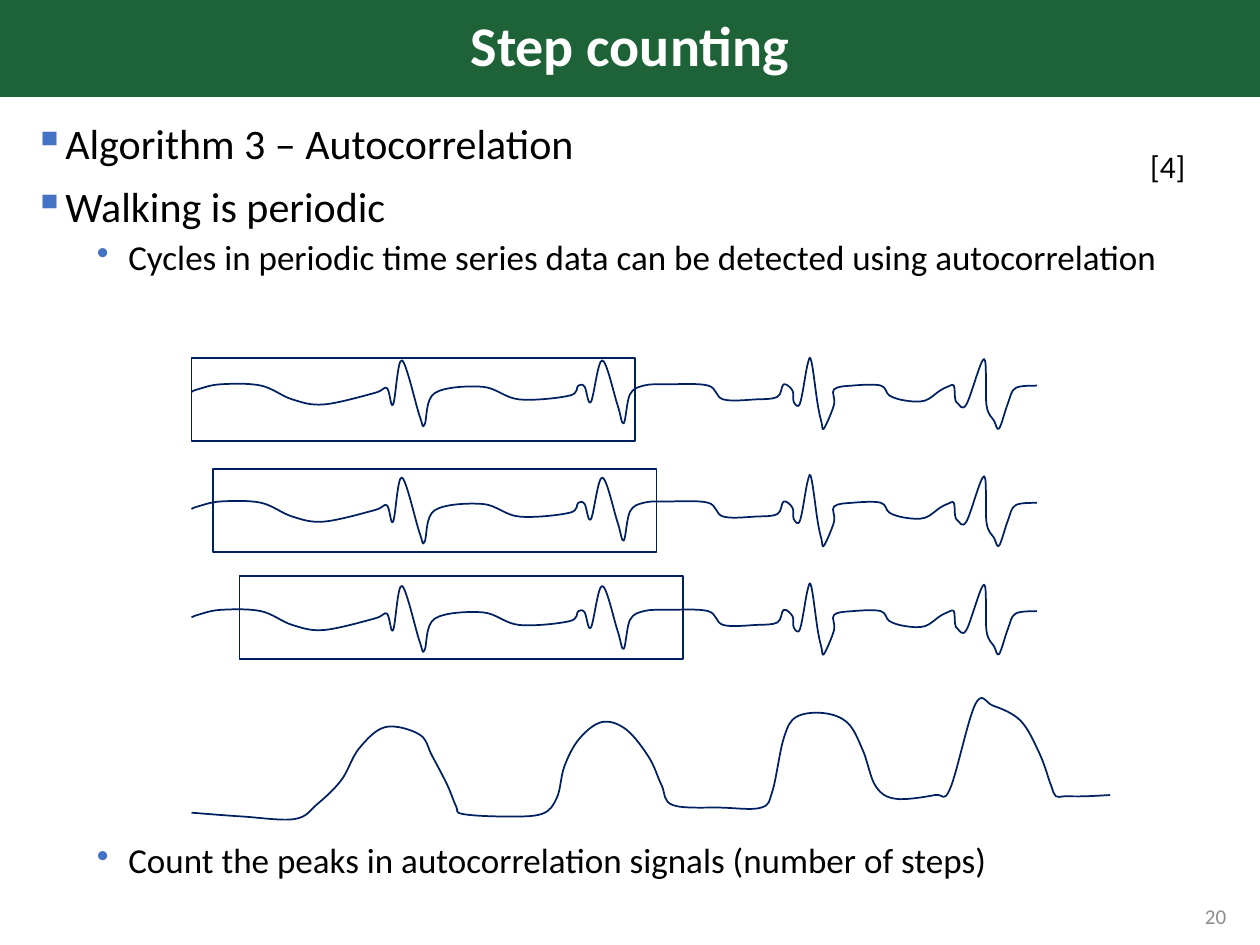
from dataclasses import dataclass
from typing import Optional

from lxml import etree
from pptx import Presentation
from pptx import util as u
from pptx.dml.color import RGBColor
from pptx.enum import shapes, text
from pptx.oxml import ns


@dataclass(frozen=True)
class Theme:
    font: str = "Calibri"
    green: str = "1E6238"
    navy: str = "002060"
    blue: str = "4472C4"
    black: str = "000000"
    white: str = "FFFFFF"
    gray: str = "8C8C8C"
    title: int = 32
    main: int = 24
    sub: int = 20
    note: int = 18
    small: int = 12


@dataclass(frozen=True)
class Box:
    left: float
    top: float
    width: float
    height: float

    def emu(self) -> list:
        return [u.Inches(v) for v in (self.left, self.top, self.width, self.height)]


@dataclass(frozen=True)
class Row:
    shift: float   # signal offset below the first one
    window: Box    # sliding window over the signal


@dataclass(frozen=True)
class Item:
    words: str
    size: int
    mark: str
    margin: float
    before: float


THEME = Theme()

ROWS = [
    Row(0, Box(1.52, 2.84, 3.52, 0.66)),
    Row(0.93, Box(1.69, 3.72, 3.52, 0.66)),
    Row(1.79, Box(1.90, 4.57, 3.52, 0.66)),
]

ITEMS = [
    Item("Algorithm 3 – Autocorrelation", THEME.main, "▪", 0.25, 10),
    Item("Walking is periodic", THEME.main, "▪", 0.25, 10),
    Item("Cycles in periodic time series data can be detected using autocorrelation",
         THEME.sub, "•", 0.75, 5),
    # The wide space leaves room for the signals
    Item("Count the peaks in autocorrelation signals (number of steps)",
         THEME.sub, "•", 0.75, 323),
]

# Knots of the curves, in inches
SIGNAL = [
    (1.52, 3.11), (1.57, 3.09), (1.75, 3.05), (2.07, 3.06), (2.32, 3.17), (2.57, 3.21),
    (2.97, 3.12), (3.07, 3.08), (3.12, 3.21), (3.19, 2.86), (3.33, 3.30), (3.37, 3.37),
    (3.45, 3.12), (3.83, 3.07), (4.12, 3.17), (4.52, 3.14), (4.59, 3.06), (4.64, 3.07),
    (4.69, 3.19), (4.78, 2.86), (4.90, 3.21), (4.95, 3.36), (5.00, 3.13), (5.11, 3.06),
    (5.30, 3.05), (5.62, 3.06), (5.74, 3.17), (6.00, 3.17), (6.17, 3.15), (6.22, 3.05),
    (6.29, 3.10), (6.30, 3.19), (6.35, 3.20), (6.41, 2.89), (6.44, 2.87), (6.49, 3.21),
    (6.52, 3.35), (6.54, 3.40), (6.62, 3.21), (6.62, 3.09), (6.77, 3.06), (6.99, 3.06),
    (7.06, 3.14), (7.19, 3.18), (7.34, 3.18), (7.46, 3.10), (7.52, 3.07), (7.57, 3.06),
    (7.58, 3.16), (7.60, 3.20), (7.67, 3.21), (7.81, 2.85), (7.83, 3.22), (7.89, 3.34),
    (7.93, 3.40), (8.00, 3.20), (8.06, 3.08), (8.23, 3.06),
]
PEAKS = [
    (1.52, 6.45), (1.92, 6.48), (2.34, 6.50), (2.52, 6.38), (2.71, 6.19), (2.85, 5.94),
    (3.06, 5.77), (3.33, 5.83), (3.43, 6.00), (3.55, 6.23), (3.62, 6.40), (3.67, 6.46),
    (4.00, 6.48), (4.30, 6.46), (4.42, 6.33), (4.48, 6.08), (4.60, 5.86), (4.78, 5.73),
    (4.97, 5.79), (5.15, 6.01), (5.25, 6.23), (5.34, 6.39), (5.73, 6.41), (6.04, 6.41),
    (6.13, 6.28), (6.22, 5.86), (6.32, 5.69), (6.54, 5.66), (6.73, 5.74), (6.85, 5.96),
    (6.95, 6.24), (7.11, 6.34), (7.42, 6.31), (7.54, 6.26), (7.74, 5.59), (7.88, 5.60),
    (8.10, 5.72), (8.25, 5.98), (8.34, 6.23), (8.38, 6.32), (8.45, 6.32), (8.61, 6.32),
    (8.81, 6.31),
]


def color(code: str) -> RGBColor:
    return RGBColor.from_string(code)


def write(frame, words: str, *, size: int, ink: str = THEME.black, bold: bool = False,
          align=text.PP_ALIGN.LEFT, lines: float = 1, before: float = 0,
          mark: Optional[str] = None, margin: float = 0) -> None:
    """Add one paragraph, using the empty first one when it is free."""
    frame.word_wrap = True
    para = frame.paragraphs[0] if not frame.text else frame.add_paragraph()
    para.alignment, para.line_spacing, para.space_before = align, lines, u.Pt(before)
    run = para.add_run()
    run.text = words
    font = run.font
    font.name, font.size, font.bold = THEME.font, u.Pt(size), bold
    font.color.rgb = color(ink)
    if mark:
        props = para._p.get_or_add_pPr()
        props.set("marL", str(u.Inches(margin)))
        props.set("indent", str(u.Inches(-0.25)))
        tint = etree.SubElement(props, ns.qn("a:buClr"))
        etree.SubElement(tint, ns.qn("a:srgbClr")).set("val", THEME.blue)
        etree.SubElement(props, ns.qn("a:buChar")).set("char", mark)


def frame(slide, box: Box, anchor=text.MSO_ANCHOR.TOP):
    area = slide.shapes.add_textbox(*box.emu()).text_frame
    area.vertical_anchor = anchor
    return area


def outline(shape) -> None:
    shape.shadow.inherit = False
    shape.fill.background()
    shape.line.color.rgb = color(THEME.navy)
    shape.line.width = u.Pt(1)


def bend(shape) -> None:
    """Turn the straight segments into Bézier curves through the same knots."""
    track = shape._element.find(".//" + ns.qn("a:path"))
    knots = [(int(p.get("x")), int(p.get("y"))) for p in track.iter(ns.qn("a:pt"))]
    ends = [knots[0], *knots, knots[-1]]
    lines = track.findall(ns.qn("a:lnTo"))
    for line, a, b, c, d in zip(lines, ends, ends[1:], ends[2:], ends[3:]):
        start = [q + (r - p) / 6 for p, q, r in zip(a, b, c)]
        stop = [q - (r - p) / 6 for p, q, r in zip(b, c, d)]
        arc = etree.Element(ns.qn("a:cubicBezTo"))
        for x, y in (start, stop, c):
            etree.SubElement(arc, ns.qn("a:pt"), x=str(round(x)), y=str(round(y)))
        track.replace(line, arc)


def curve(slide, knots: list, shift: float = 0) -> None:
    points = [(u.Inches(x), u.Inches(y + shift)) for x, y in knots]
    pen = slide.shapes.build_freeform(*points[0])
    pen.add_line_segments(points[1:], close=False)
    shape = pen.convert_to_shape()
    bend(shape)
    outline(shape)


def main() -> None:
    deck = Presentation()
    deck.slide_width, deck.slide_height = u.Inches(10), u.Inches(7.5)
    slide = deck.slides.add_slide(deck.slide_layouts[6])
    rect = shapes.MSO_SHAPE.RECTANGLE

    # Title bar
    bar = slide.shapes.add_shape(rect, *Box(0, 0, 10, 0.77).emu())
    bar.shadow.inherit = False
    bar.fill.solid()
    bar.fill.fore_color.rgb = color(THEME.green)
    bar.line.fill.background()
    bar.text_frame.vertical_anchor = text.MSO_ANCHOR.MIDDLE
    write(bar.text_frame, "Step counting", size=THEME.title, ink=THEME.white, bold=True,
          align=text.PP_ALIGN.CENTER, lines=0.9)

    # Bullet list
    body = frame(slide, Box(0.17, 0.93, 9.66, 6.41))
    for item in ITEMS:
        write(body, item.words, size=item.size, lines=0.9, before=item.before,
              mark=item.mark, margin=item.margin)

    # Signals with their sliding windows
    for row in ROWS:
        curve(slide, SIGNAL, row.shift)
        outline(slide.shapes.add_shape(rect, *row.window.emu()))

    # Autocorrelation result
    curve(slide, PEAKS)

    # Reference and slide number
    write(frame(slide, Box(9.03, 1.12, 0.5, 0.4)), "[4]", size=THEME.note)
    write(frame(slide, Box(7.58, 7.07, 2.25, 0.4), text.MSO_ANCHOR.MIDDLE), "20",
          size=THEME.small, ink=THEME.gray, align=text.PP_ALIGN.RIGHT)

    deck.save("out.pptx")


if __name__ == "__main__":
    main()
